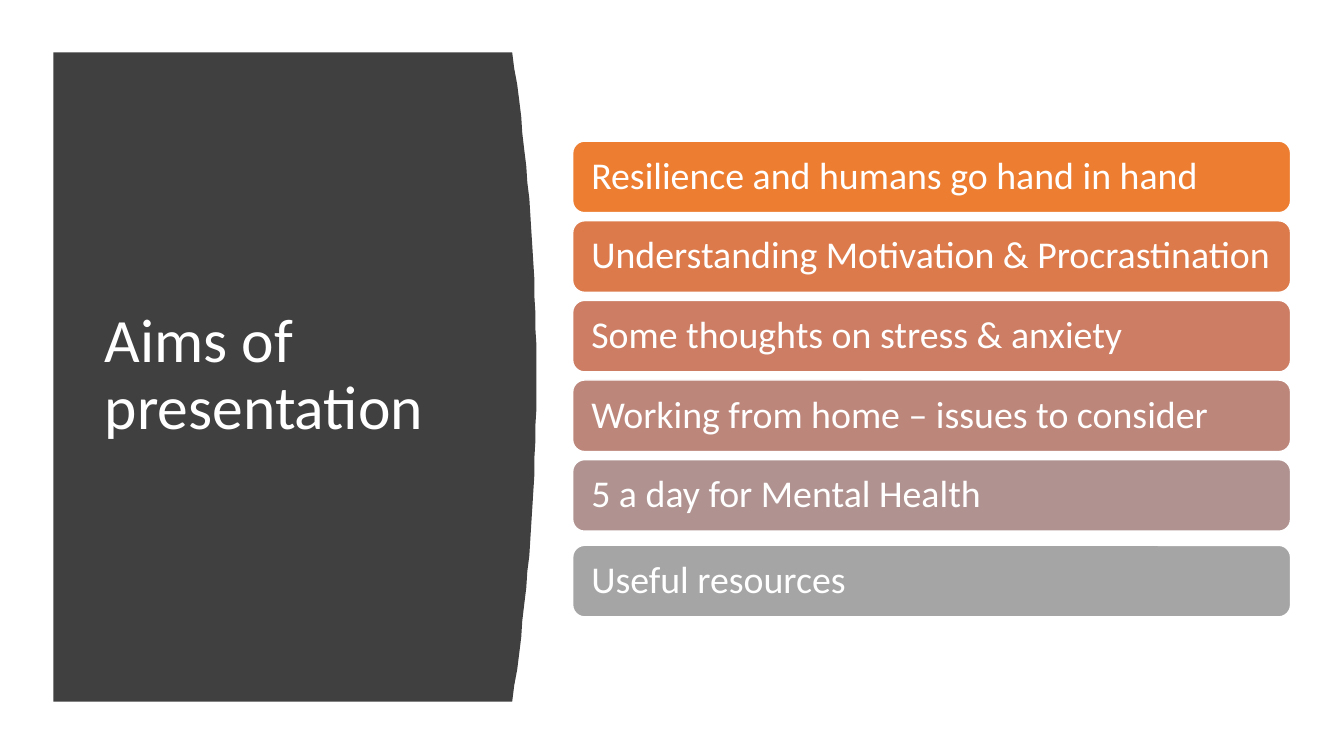
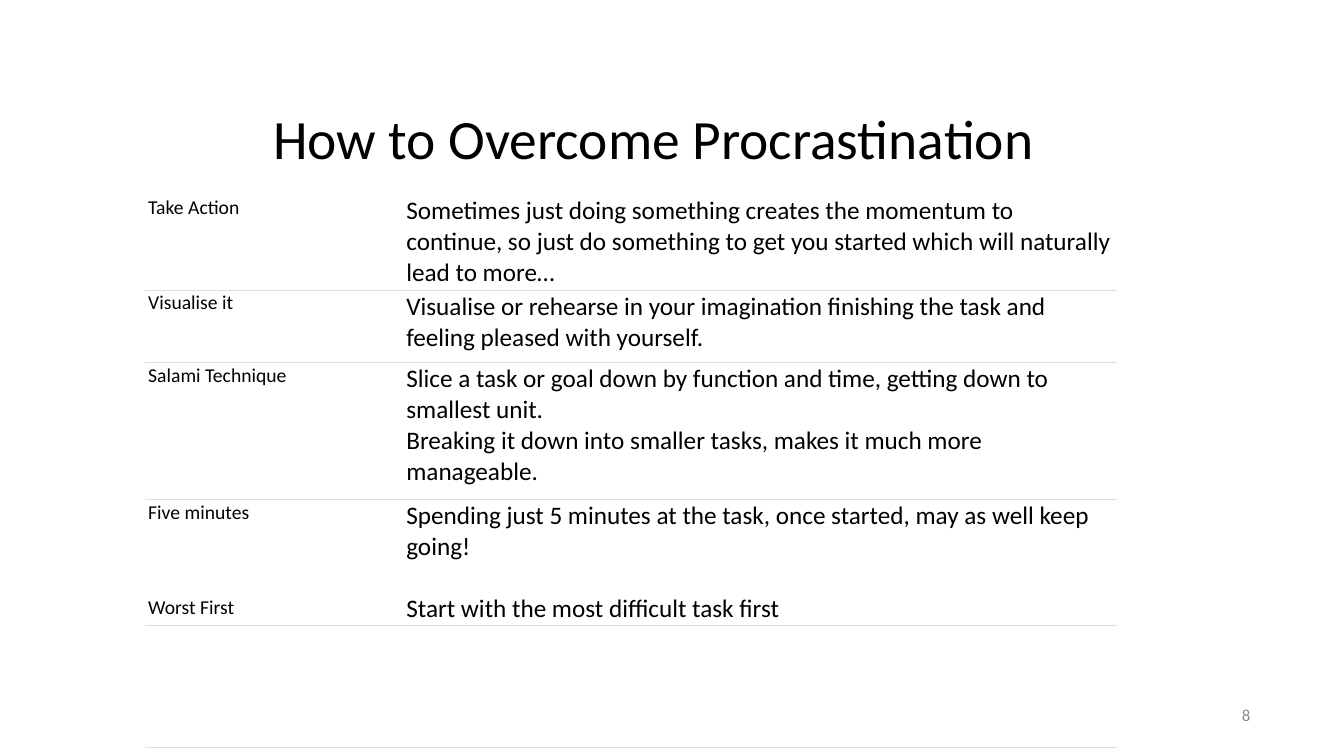
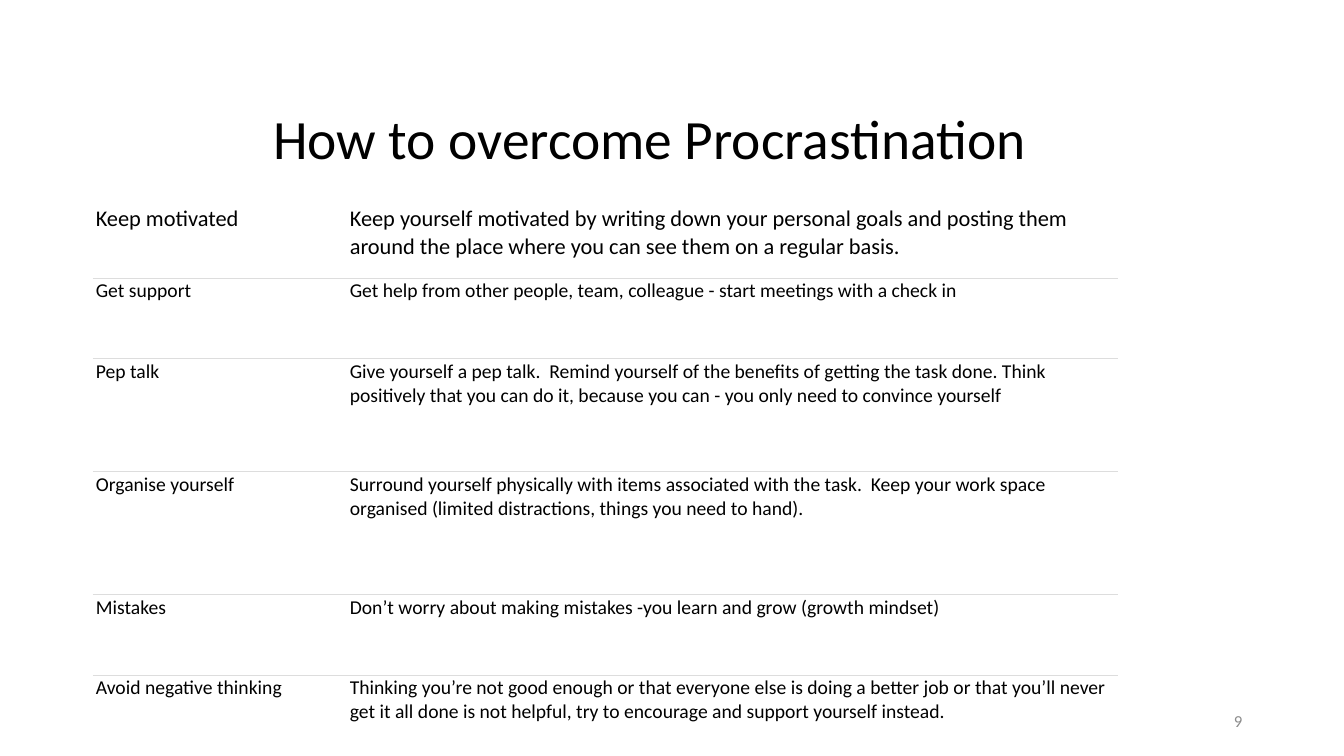
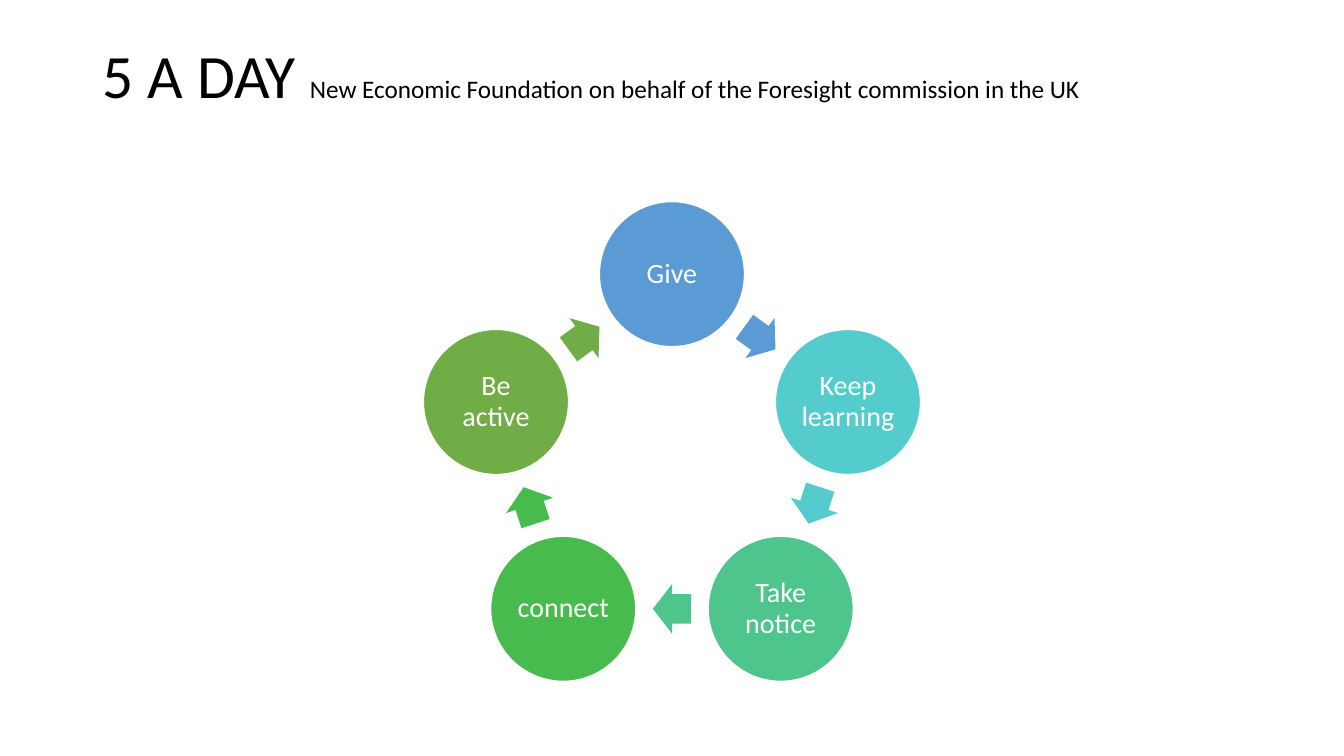
from math import cos, pi, radians, sin

from lxml import etree
from pptx import Presentation
from pptx.dml.color import RGBColor
from pptx.enum.shapes import MSO_SHAPE as SHAPE
from pptx.enum.text import MSO_ANCHOR as ANCHOR, MSO_AUTO_SIZE as AUTO, PP_ALIGN as ALIGN
from pptx.oxml import parse_xml
from pptx.oxml.ns import nsdecls, qn
from pptx.util import Pt

PX = 9144
FONT = "Calibri"
NO_STYLE = "{2D5ABB26-0587-4C30-8999-92F81FD0307C}"
WHITE = RGBColor(0xFF, 0xFF, 0xFF)
BLACK = RGBColor(0, 0, 0)
CHARCOAL = RGBColor(0x40, 0x40, 0x40)
GREY = RGBColor(0x8C, 0x8C, 0x8C)
RULE = RGBColor(0xDD, 0xDD, 0xDD)
ORANGE = RGBColor(0xED, 0x7D, 0x31)
RUST = RGBColor(0xDC, 0x7A, 0x4B)
CLAY = RGBColor(0xCC, 0x7D, 0x64)
ROSE = RGBColor(0xBD, 0x86, 0x7B)
MAUVE = RGBColor(0xB0, 0x93, 0x91)
SILVER = RGBColor(0xA5, 0xA5, 0xA5)
BLUE = RGBColor(0x5B, 0x9B, 0xD5)
AQUA = RGBColor(0x54, 0xCC, 0xCD)
MINT = RGBColor(0x4D, 0xC5, 0x8D)
GREEN = RGBColor(0x48, 0xBB, 0x4F)
OLIVE = RGBColor(0x70, 0xAD, 0x47)

AIMS = [
    ("Resilience and humans go hand in hand", ORANGE),
    ("Understanding Motivation & Procrastination", RUST),
    ("Some thoughts on stress & anxiety", CLAY),
    ("Working from home – issues to consider", ROSE),
    ("5 a day for Mental Health", MAUVE),
]
STEPS = [
    ("Give", BLUE),
    ("Keep learning", AQUA),
    ("Take notice", MINT),
    ("connect", GREEN),
    ("Be active", OLIVE),
]
START_TIPS = [
    (95, 14, 18, 0, 0, "Take Action",
     "Sometimes just doing something creates the momentum to continue, so just do "
     "something to get you started which will naturally lead to more…"),
    (72, 14, 18, 0, 0, "Visualise it",
     "Visualise or rehearse in your imagination finishing the task and feeling "
     "pleased with yourself."),
    (136, 14, 18, 0, 0, "Salami Technique",
     "Slice a task or goal down by function and time, getting down to smallest unit.\n"
     "Breaking it down into smaller tasks, makes it much more manageable."),
    (125, 14, 18, 51, 22, "Five minutes\nWorst First",
     "Spending just 5 minutes at the task, once started, may as well keep going!\n"
     "Start with the most difficult task first"),
    (121, 14, 18, 0, 0, "", ""),
]
KEEP_GOING_TIPS = [
    (73, 16, 16, 0, 0, "Keep motivated",
     "Keep yourself motivated by writing down your personal goals and posting them "
     "around the place where you can see them on a regular basis."),
    (80, 14, 14, 0, 0, "Get support",
     "Get help from other people, team, colleague - start meetings with a check in"),
    (112, 14, 14, 0, 0, "Pep talk",
     "Give yourself a pep talk.  Remind yourself of the benefits of getting the task "
     "done. Think positively that you can do it, because you can - you only need to "
     "convince yourself"),
    (122, 14, 14, 0, 0, "Organise yourself",
     "Surround yourself physically with items associated with the task.  Keep your "
     "work space organised (limited distractions, things you need to hand)."),
    (80, 14, 14, 0, 0, "Mistakes",
     "Don’t worry about making mistakes -you learn and grow (growth mindset)"),
    (80, 14, 14, 0, 0, "Avoid negative thinking",
     "Thinking you’re not good enough or that everyone else is doing a better job or "
     "that you’ll never get it all done is not helpful, try to encourage and support "
     "yourself instead."),
]


def emu(*lengths):
    """Turn px lengths into whole EMU."""
    return [round(n * PX) for n in lengths]


def set_insets(target, left, top, right, bottom):
    """Set the four inner margins of a text frame or a cell."""
    (target.margin_left, target.margin_top,
     target.margin_right, target.margin_bottom) = emu(left, top, right, bottom)


def write(tf, *runs, size=18, color=BLACK, align=ALIGN.LEFT, spacing=None, gap=0):
    """Write runs, given as text or (text, size); a newline starts a paragraph."""
    p = tf.paragraphs[0]
    for run in runs:
        text, run_size = run if isinstance(run, tuple) else (run, size)
        for i, line in enumerate(text.split("\n")):
            if i:
                p = tf.add_paragraph()
                p.space_before = Pt(gap)
            p.alignment = align
            if spacing:
                p.line_spacing = spacing
            r = p.add_run()
            r.text = line
            r.font.name, r.font.size = FONT, Pt(run_size)
            r.font.color.rgb = color


def add_title(s, box, *runs, anchor=ANCHOR.MIDDLE, **fmt):
    """Place the title placeholder in front of what is drawn so far."""
    sp = s.shapes.title
    sp.left, sp.top, sp.width, sp.height = emu(*box)
    tf = sp.text_frame
    tf.auto_size, tf.word_wrap, tf.vertical_anchor = AUTO.NONE, True, anchor
    write(tf, *runs, spacing=0.9, **fmt)
    s.shapes._spTree.append(sp._element)


def paint(sp, color, outline=None):
    """Give a shape a flat fill and an optional outline."""
    sp.shadow.inherit = False
    sp.fill.solid()
    sp.fill.fore_color.rgb = color
    if outline is None:
        sp.line.fill.background()
    else:
        sp.line.color.rgb, sp.line.width = outline, Pt(1)


def add_label_shape(s, kind, box, text, color, insets, **fmt):
    """Add a filled shape with white text inside."""
    sp = s.shapes.add_shape(kind, *emu(*box))
    paint(sp, color, WHITE)
    tf = sp.text_frame
    tf.word_wrap, tf.vertical_anchor = True, ANCHOR.MIDDLE
    set_insets(tf, *insets)
    write(tf, text, color=WHITE, spacing=0.9, **fmt)


def add_panel(s, box, bulge=24, steps=40):
    """Draw the dark panel whose right side bulges outwards."""
    x, y, w, h = box
    arc = [(x + w - bulge * (2 * i / steps - 1) ** 2, y + h * i / steps)
           for i in range(steps + 1)]
    builder = s.shapes.build_freeform(x, y, scale=PX)
    builder.add_line_segments(arc + [(x, y + h)], close=True)
    paint(builder.convert_to_shape(), CHARCOAL)


def add_bars(s, box, aims, pitch=79):
    """Stack the bars downwards, the first one filling the box."""
    x, y, w, h = box
    for i, (text, color) in enumerate(aims):
        add_label_shape(s, SHAPE.ROUNDED_RECTANGLE, (x, y + i * pitch, w, h),
                        text, color, (15, 14, 15, 14), size=27)


def add_cycle(s, box, steps, disc=144, arrow=(38, 49)):
    """Set discs clockwise on a ring from the top of the box, arrows between."""
    x, y, w, h = box
    turn = 360 / len(steps)
    ring = (h - disc) / (1 + cos(pi / len(steps)))
    cx, cy = x + w / 2, y + disc / 2 + ring

    def around(angle, radius, width, height):
        """Return the box centred at an angle on a ring."""
        a = radians(angle)
        return (cx + radius * sin(a) - width / 2,
                cy - radius * cos(a) - height / 2, width, height)

    for i, (text, color) in enumerate(steps):
        add_label_shape(s, SHAPE.OVAL, around(i * turn, ring, disc, disc), text,
                        color, (3, 3, 3, 3), size=20, align=ALIGN.CENTER)
        middle = (i + 0.5) * turn
        inner = ring * cos(pi / len(steps))
        sp = s.shapes.add_shape(SHAPE.RIGHT_ARROW, *emu(*around(middle, inner, *arrow)))
        sp.adjustments[0], sp.adjustments[1] = 0.6, 0.5
        sp.rotation = middle
        paint(sp, color)


def underline_cell(cell):
    """Draw a thin rule below a cell."""
    ln = parse_xml(f'<a:lnB {nsdecls("a")} w="9525"/>')
    fill = etree.SubElement(ln, qn("a:solidFill"))
    etree.SubElement(fill, qn("a:srgbClr"), val=str(RULE))
    cell._tc.get_or_add_tcPr().insert(0, ln)


def add_tips(s, x, y, widths, tips, last_rule):
    """Add the two-column table of tips."""
    heights = [tip[0] for tip in tips]
    frame = s.shapes.add_table(len(tips), len(widths),
                               *emu(x, y, sum(widths), sum(heights)))
    table = frame.table
    table.first_row = table.horz_banding = False
    table._tbl.tblPr.find(qn("a:tableStyleId")).text = NO_STYLE
    for column, width in zip(table.columns, widths):
        column.width = width * PX
    for i, (height, *formats) in enumerate(tips):
        table.rows[i].height = height * PX
        for j, (size, gap, text) in enumerate(zip(formats[:2], formats[2:4], formats[4:])):
            cell = table.cell(i, j)
            set_insets(cell, 3, 1, 3, 2)
            cell.fill.solid()
            cell.fill.fore_color.rgb = WHITE
            if text:
                write(cell.text_frame, text, size=size, gap=gap)
            if last_rule or i < len(tips) - 1:
                underline_cell(cell)


def add_page_number(s, box, number):
    """Add the grey page number."""
    tf = s.shapes.add_textbox(*emu(*box)).text_frame
    tf.word_wrap, tf.vertical_anchor = True, ANCHOR.MIDDLE
    write(tf, number, size=12, color=GREY, align=ALIGN.RIGHT)


def aims_slide(s):
    """Build the slide with the aims."""
    add_panel(s, (53, 52, 479, 644))
    add_title(s, (94, 111, 374, 524), "Aims of presentation", size=44, color=WHITE)
    add_bars(s, (568, 140, 712, 71), AIMS)
    add_bars(s, (568, 541, 712, 71), [("Useful resources", SILVER)])


def tips_slide(s, title, number, number_at, table_at, widths, tips, last_rule):
    """Build a slide with a table of tips."""
    add_title(s, (261, 101, 839, 78), title, size=39.6)
    add_page_number(s, (*number_at, 300, 40), number)
    add_tips(s, *table_at, widths, tips, last_rule)


def five_a_day_slide(s):
    """Build the slide with the cycle of five steps."""
    add_title(s, (92, 40, 1150, 145), ("5 A DAY ", 44),
              ("New Economic Foundation on behalf of the Foresight commission in the UK", 18),
              anchor=ANCHOR.TOP)
    add_cycle(s, (420, 200, 493, 476), STEPS)


def main():
    """Build and save the presentation."""
    prs = Presentation()
    prs.slide_width, prs.slide_height = emu(1333, 750)

    def new_slide():
        """Add a title-only slide."""
        return prs.slides.add_slide(prs.slide_layouts[5])

    aims_slide(new_slide())
    tips_slide(new_slide(), "How to Overcome Procrastination", "8", (950, 689),
               (144, 193), (256, 708), START_TIPS, True)
    tips_slide(new_slide(), "How to overcome Procrastination", "9", (942, 695),
               (92, 203), (252, 765), KEEP_GOING_TIPS, False)
    five_a_day_slide(new_slide())
    prs.save("out.pptx")


if __name__ == "__main__":
    main()
